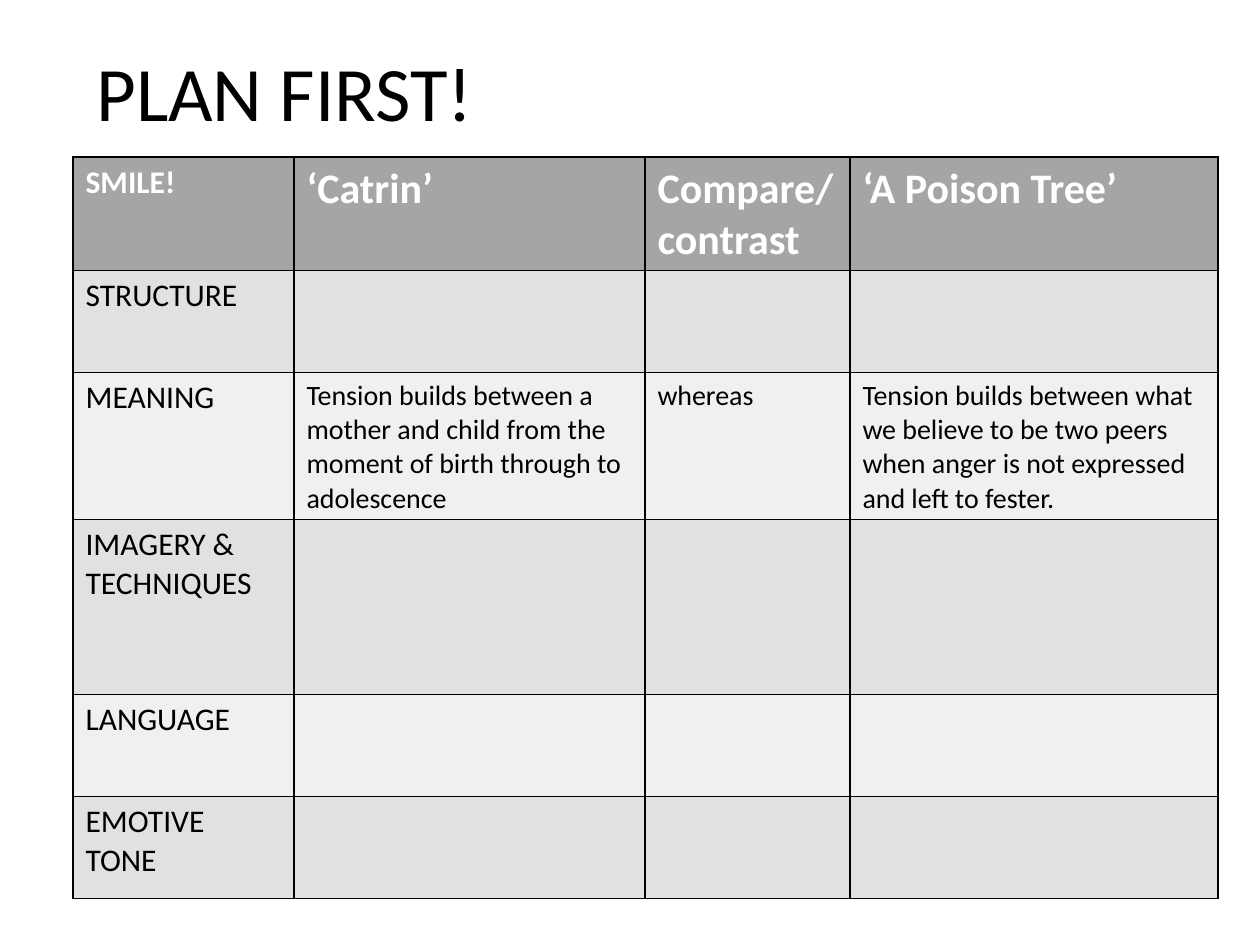
"""Build a planning slide with a poem comparison table."""
from lxml.etree import SubElement as Sub
from pptx import Presentation as Deck
from pptx.dml.color import RGBColor as Rgb
from pptx.enum.text import MSO_ANCHOR as Anchor
from pptx.oxml.ns import qn
from pptx.util import Pt

PX = 914400 // 126
FONT = "Calibri"
HUES = {"ink": "000000", "head": "A5A5A5", "odd": "E1E1E1",
        "even": "F0F0F0", "white": "FFFFFF"}
COLS = [221, 351, 205, 368]
ROWS = [102, 102, 102, 175, 102, 102]
CELLS = [
    ["SMILE!", "‘Catrin’", "Compare/ contrast", "‘A Poison Tree’"],
    ["STRUCTURE", "", "", ""],
    ["MEANING",
     "Tension builds between a mother and child from the moment of birth "
     "through to adolescence",
     "whereas",
     "Tension builds between what we believe to be two peers when anger is "
     "not expressed and left to fester."],
    ["IMAGERY & TECHNIQUES", "", "", ""],
    ["LANGUAGE", "", "", ""],
    ["EMOTIVE TONE", "", "", ""],
]


def px(*nums):
    return [n * PX for n in nums]


def add_run(para, text, size, hue="ink", bold=False):
    run = para.add_run()
    run.text = text
    font = run.font
    font.name, font.size, font.bold = FONT, Pt(size), bold
    font.color.rgb = Rgb.from_string(HUES[hue])


def add_title(slide, text):
    frame = slide.shapes.add_textbox(*px(84, 4, 1086, 186)).text_frame
    frame.word_wrap = True
    frame.vertical_anchor = Anchor.MIDDLE
    para = frame.paragraphs[0]
    para.line_spacing = 0.9
    add_run(para, text, 44)


def paint(cell, hue):
    props = cell._tc.get_or_add_tcPr()
    for side in ("lnL", "lnR", "lnT", "lnB"):
        line = Sub(props, qn(f"a:{side}"), w=str(Pt(1)))
        fill = Sub(line, qn("a:solidFill"))
        Sub(fill, qn("a:srgbClr"), val=HUES["ink"])
    cell.fill.solid()
    cell.fill.fore_color.rgb = Rgb.from_string(HUES[hue])


def add_grid(slide):
    box = px(73, 157, sum(COLS), sum(ROWS))
    grid = slide.shapes.add_table(len(ROWS), len(COLS), *box).table
    for col, wide in zip(grid.columns, COLS):
        col.width = wide * PX
    for row, high in zip(grid.rows, ROWS):
        row.height = high * PX
    for r, texts in enumerate(CELLS):
        head = r == 0
        band = "head" if head else "odd" if r % 2 else "even"
        for c, text in enumerate(texts):
            cell = grid.cell(r, c)
            paint(cell, band)
            if text:
                size = 18 if c == 0 else 24 if head else 16
                add_run(cell.text_frame.paragraphs[0], text, size,
                        "white" if head else "ink", head)


def main():
    deck = Deck()
    deck.slide_width, deck.slide_height = px(1260, 945)
    slide = deck.slides.add_slide(deck.slide_layouts[6])
    add_title(slide, "PLAN FIRST!")
    add_grid(slide)
    deck.save("out.pptx")


if __name__ == "__main__":
    main()
